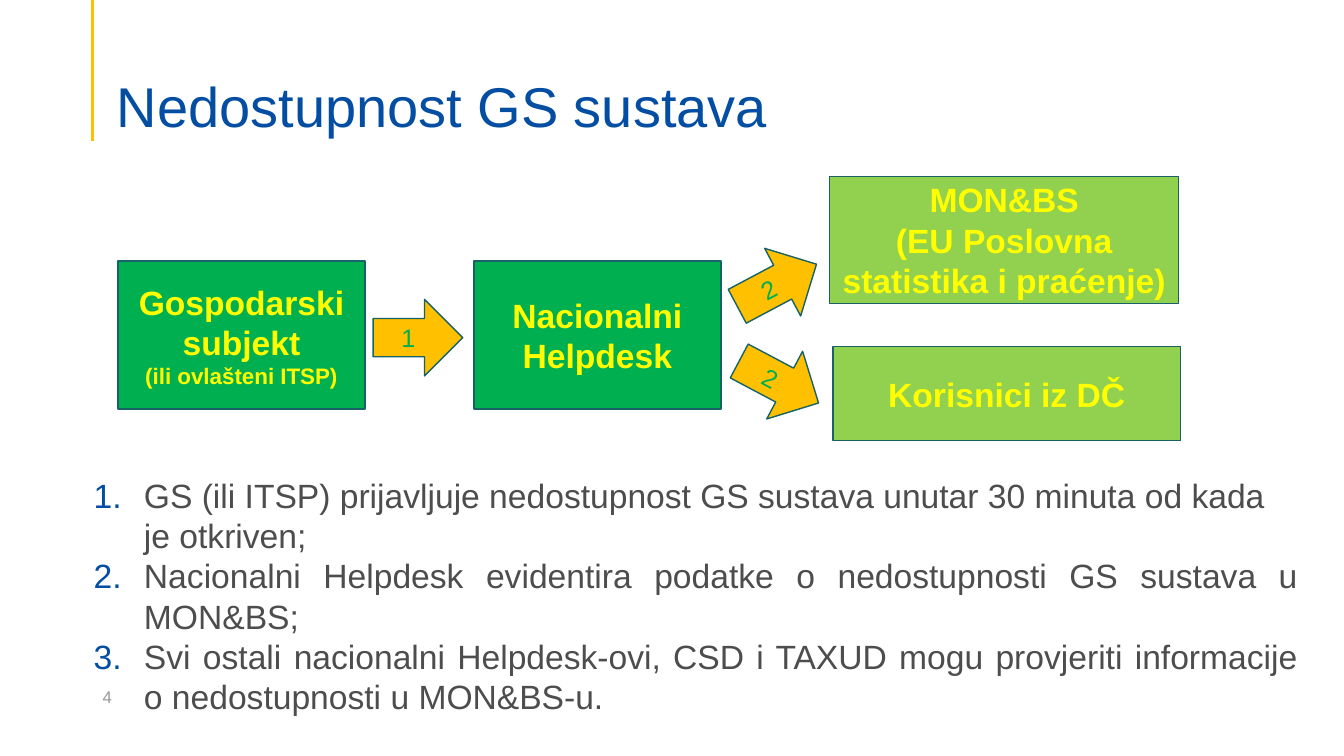
from pptx import Presentation
from pptx.dml.color import RGBColor
from pptx.enum.shapes import MSO_CONNECTOR, MSO_SHAPE
from pptx.enum.text import MSO_ANCHOR, PP_ALIGN
from pptx.oxml.ns import qn
from pptx.util import Inches, Pt
from lxml.etree import SubElement

COLORS = {
    "accent": "FFC000", "title": "034EA2", "body": "4D4D4D", "number": "979797",
    "outline": "166267", "dark_green": "00B050", "light_green": "92D050", "yellow": "FFFF00",
}
TITLE = "Nedostupnost GS sustava"
SLIDE_NUMBER = "4"
BOXES = [
    ((1.17, 2.59, 2.45, 1.47), "dark_green", [("Gospodarski subjekt", 24), ("(ili ovlašteni ITSP)", 16)]),
    ((4.7, 2.59, 2.45, 1.47), "dark_green", [("Nacionalni Helpdesk", 24)]),
    ((8.23, 1.75, 3.46, 1.26), "light_green", [("MON&BS", 24), ("(EU Poslovna statistika i praćenje)", 24)]),
    ((8.26, 3.44, 3.45, 0.93), "light_green", [("Korisnici iz DČ", 24)]),
]
ARROW_SIZE = (0.89, 0.76)
ARROWS = [("1", 3.7, 2.97, 0), ("2", 7.28, 3.41, 27.9), ("2", 7.26, 2.45, 332)]
STEPS = [
    ("GS (ili ITSP) prijavljuje nedostupnost GS sustava unutar 30 minuta od kada je otkriven;", PP_ALIGN.LEFT),
    ("Nacionalni Helpdesk evidentira podatke o nedostupnosti GS sustava u MON&BS;", PP_ALIGN.JUSTIFY),
    ("Svi ostali nacionalni Helpdesk-ovi, CSD i TAXUD mogu provjeriti informacije "
     "o nedostupnosti u MON&BS-u.", PP_ALIGN.JUSTIFY),
]


def rgb(name):
    return RGBColor.from_string(COLORS[name])


def number_paragraph(paragraph):
    properties = paragraph._p.get_or_add_pPr()
    properties.set("marL", str(Inches(0.5)))
    properties.set("indent", str(-Inches(0.5)))
    bullet_color = SubElement(properties, qn("a:buClr"))
    SubElement(bullet_color, qn("a:srgbClr"), val=COLORS["title"])
    SubElement(properties, qn("a:buFont"), typeface="+mj-lt")
    SubElement(properties, qn("a:buAutoNum"), type="arabicPeriod")


def write(shape, lines, color, anchor, bold=False, numbered=False):
    frame = shape.text_frame
    frame.word_wrap = True
    frame.vertical_anchor = anchor
    for index, (text, size, alignment) in enumerate(lines):
        paragraph = frame.add_paragraph() if index else frame.paragraphs[0]
        paragraph.text = text
        paragraph.alignment = alignment
        if numbered:
            number_paragraph(paragraph)
        paragraph.font.name = "Arial"
        paragraph.font.size = Pt(size)
        paragraph.font.bold = bold
        paragraph.font.color.rgb = rgb(color)
    return frame


def add_text(slide, area, lines, color, anchor, numbered=False):
    shape = slide.shapes.add_textbox(*map(Inches, area))
    return write(shape, lines, color, anchor, numbered=numbered)


def add_block(slide, kind, area, fill, lines, color, bold=False):
    shape = slide.shapes.add_shape(kind, *map(Inches, area))
    shape.shadow.inherit = False
    shape.fill.solid()
    shape.fill.fore_color.rgb = rgb(fill)
    shape.line.color.rgb = rgb("outline")
    shape.line.width = Pt(1)
    centred = [(text, size, PP_ALIGN.CENTER) for text, size in lines]
    write(shape, centred, color, MSO_ANCHOR.MIDDLE, bold)
    return shape


def main():
    presentation = Presentation()
    presentation.slide_width = Inches(13.33)
    presentation.slide_height = Inches(7.5)
    slide = presentation.slides.add_slide(presentation.slide_layouts[6])

    rule = slide.shapes.add_connector(
        MSO_CONNECTOR.STRAIGHT, Inches(0.92), Inches(0), Inches(0.92), Inches(1.4))
    rule.line.color.rgb = rgb("accent")
    rule.line.width = Pt(2.25)
    SubElement(rule._element.spPr, qn("a:effectLst"))

    steps = [(text, 24, alignment) for text, alignment in STEPS]
    add_text(slide, (0.83, 4.66, 12.14, 2.62), steps, "body", MSO_ANCHOR.TOP, numbered=True)
    title = add_text(slide, (1.06, 0.53, 11.5, 0.86), [(TITLE, 40, PP_ALIGN.LEFT)],
                     "title", MSO_ANCHOR.BOTTOM)
    title.margin_bottom = 0
    title.paragraphs[0].line_spacing = 0.9

    for area, fill, lines in BOXES:
        add_block(slide, MSO_SHAPE.RECTANGLE, area, fill, lines, "yellow", bold=True)
    for label, left, top, rotation in ARROWS:
        arrow = add_block(slide, MSO_SHAPE.RIGHT_ARROW, (left, top, *ARROW_SIZE),
                          "accent", [(label, 18)], "dark_green")
        arrow.rotation = rotation

    add_text(slide, (0.92, 6.71, 3, 0.4), [(SLIDE_NUMBER, 12, PP_ALIGN.LEFT)],
             "number", MSO_ANCHOR.MIDDLE)
    presentation.save("out.pptx")


if __name__ == "__main__":
    main()
